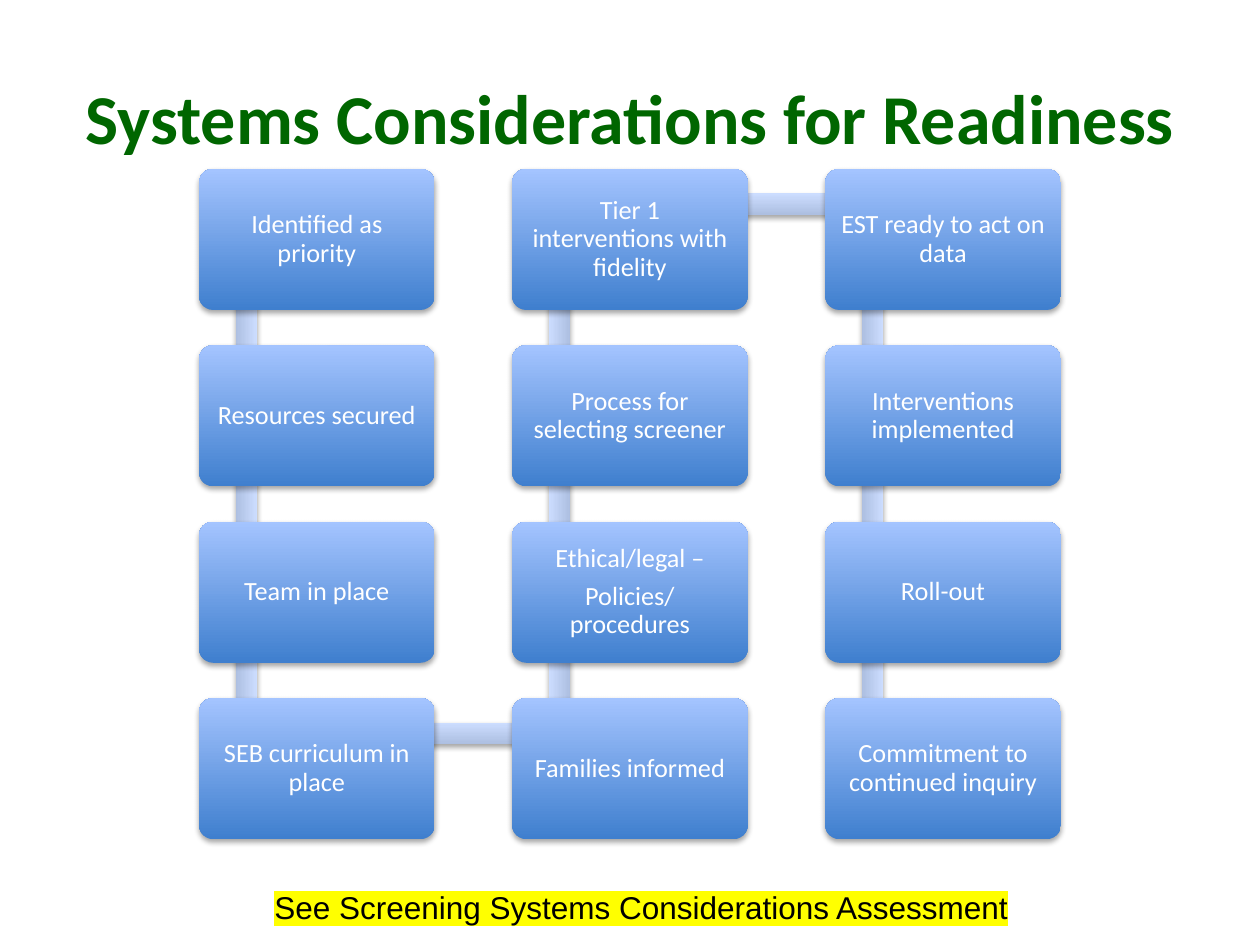
from lxml.etree import SubElement
from pptx import Presentation
from pptx.dml.color import RGBColor
from pptx.enum.shapes import MSO_SHAPE
from pptx.enum.text import MSO_ANCHOR, MSO_AUTO_SIZE, PP_ALIGN
from pptx.oxml.ns import qn
from pptx.util import Inches, Pt

# Content: steps in reading order, four to a column, lines of text in each
TITLE = "Systems Considerations for Readiness"
STEPS = [
    ["Identified as priority"],
    ["Resources secured"],
    ["Team in place"],
    ["SEB curriculum in place"],
    ["Families informed"],
    ["Ethical/legal –", "Policies/procedures"],
    ["Process for selecting screener"],
    ["Tier 1 interventions with fidelity"],
    ["EST ready to act on data"],
    ["Interventions implemented"],
    ["Roll-out"],
    ["Commitment to continued inquiry"],
]
NOTE = "See Screening Systems Considerations Assessment"

THEME = {
    "head": "006600", "step": "FFFFFF", "note": "000000", "mark": "FFFF00",
    "box": ("3F7FCE", "A4C4FF"), "bar": ("ADBFE1", "CCDDFF"),
    "font": "Calibri", "plain": "Arial",
    "head_pt": 40, "step_pt": 15, "note_pt": 18,
}

# Grid, in inches
ROWS = 4
LEFT, TOP = 1.58, 1.34
STEP_X, STEP_Y = 2.485, 1.4
BOX_W, BOX_H = 1.87, 1.12
BAR_H = 0.17
PIN_X, PIN_Y = 0.375, 0.28  # where the bars meet inside a box


def add_run(para, text, role, font, bold=False):
    run = para.add_run()
    run.text = text
    run.font.size = Pt(THEME[role + "_pt"])
    run.font.bold = bold
    run.font.color.rgb = RGBColor.from_string(THEME[role])
    run.font.name = THEME[font]
    return run


def add_part(group, kind, x, y, w, h, tones):
    part = group.shapes.add_shape(kind, Inches(x), Inches(y), Inches(w), Inches(h))
    part.fill.gradient()
    part.fill.gradient_angle = 90
    for stop, tone in zip(part.fill.gradient_stops, tones):
        stop.color.rgb = RGBColor.from_string(tone)
    part.line.fill.background()
    # Soft shadow straight below
    part.shadow.inherit = False
    effects = part._element.spPr.find(qn("a:effectLst"))
    shade = SubElement(effects, qn("a:outerShdw"), blurRad=str(Pt(3.1)),
                       dist=str(Pt(1.8)), dir="5400000", rotWithShape="0")
    black = SubElement(shade, qn("a:srgbClr"), val="000000")
    SubElement(black, qn("a:alpha"), val="35000")
    return part


def place(i):
    """Top left of step i: the path runs down, up, then down."""
    col, row = divmod(i, ROWS)
    if col % 2:
        row = ROWS - 1 - row
    return LEFT + col * STEP_X, TOP + row * STEP_Y


def add_bar(group, start, end):
    dx, dy = end[0] - start[0], end[1] - start[1]
    size = abs(dx) + abs(dy)
    mid_x = start[0] + PIN_X + dx / 2
    mid_y = start[1] + PIN_Y + dy / 2
    bar = add_part(group, MSO_SHAPE.RECTANGLE, mid_x - size / 2,
                   mid_y - BAR_H / 2, size, BAR_H, THEME["bar"])
    if abs(dy) > abs(dx):
        bar.rotation = 90 if dy > 0 else 270


def add_box(group, spot, lines):
    box = add_part(group, MSO_SHAPE.ROUNDED_RECTANGLE, *spot, BOX_W, BOX_H,
                   THEME["box"])
    box.adjustments[0] = 0.1
    frame = box.text_frame
    frame.word_wrap = True
    frame.vertical_anchor = MSO_ANCHOR.MIDDLE
    frame.margin_left = frame.margin_right = Inches(0.09)
    frame.margin_top = frame.margin_bottom = Inches(0.09)
    for n, line in enumerate(lines):
        para = frame.add_paragraph() if n else frame.paragraphs[0]
        para.alignment = PP_ALIGN.CENTER
        para.line_spacing = 0.9
        para.space_after = Pt(0.35 * THEME["step_pt"])
        add_run(para, line, "step", "font")


def main():
    deck = Presentation()
    deck.slide_width, deck.slide_height = Inches(10), Inches(7.5)
    slide = deck.slides.add_slide(deck.slide_layouts[5])

    # Title
    head = slide.shapes.title
    head.left, head.top = Inches(0.5), Inches(0.3)
    head.width, head.height = Inches(9), Inches(1.25)
    head.text_frame.vertical_anchor = MSO_ANCHOR.MIDDLE
    para = head.text_frame.paragraphs[0]
    para.alignment = PP_ALIGN.CENTER
    add_run(para, TITLE, "head", "font", bold=True)

    # Path of steps, each bar behind the boxes it joins
    group = slide.shapes.add_group_shape()
    for i, lines in enumerate(STEPS):
        if i + 1 < len(STEPS):
            add_bar(group, place(i), place(i + 1))
        add_box(group, place(i), lines)

    # Highlighted note
    note = slide.shapes.add_textbox(Inches(2.08), Inches(7), Inches(6.09), Inches(0.4))
    note.text_frame.word_wrap = False
    note.text_frame.auto_size = MSO_AUTO_SIZE.SHAPE_TO_FIT_TEXT
    run = add_run(note.text_frame.paragraphs[0], NOTE, "note", "plain")
    mark = SubElement(run._r.rPr, qn("a:highlight"))
    SubElement(mark, qn("a:srgbClr"), val=THEME["mark"])
    run._r.rPr.find(qn("a:latin")).addprevious(mark)

    deck.save("out.pptx")


if __name__ == "__main__":
    main()
